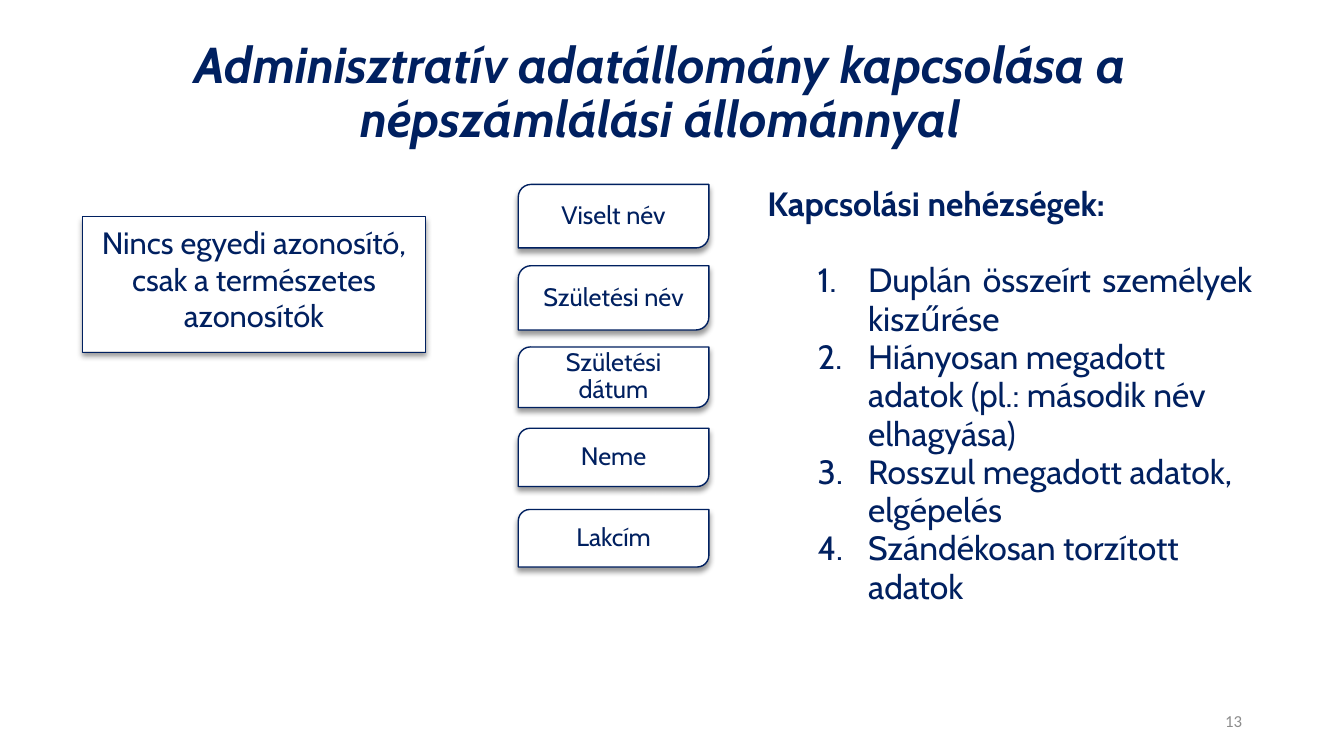
import pptx
import pptx.util
import pptx.dml.color
import pptx.enum.text
import pptx.enum.shapes
import lxml.etree

Pt = pptx.util.Pt
Inches = pptx.util.Inches
Rgb = pptx.dml.color.RGBColor.from_string
Align = pptx.enum.text.PP_ALIGN
Kind = pptx.enum.shapes.MSO_SHAPE
A = "{http://schemas.openxmlformats.org/drawingml/2006/main}"

theme = {
    "navy": "002060", "white": "FFFFFF", "gray": "8C8C8C", "black": "000000",
    "face": "Cabin", "plain": "Calibri",
    "title": 36, "list": 24, "note": 22, "key": 18, "page": 12,
}

deck = pptx.Presentation()
deck.slide_width, deck.slide_height = Inches(13.33), Inches(7.5)
col, row = deck.slide_width / 100, deck.slide_height / 100
slide = deck.slides.add_slide(deck.slide_layouts[1])
shapes = slide.shapes


def write(para, text, size, form={}, face="face", color="navy", **look):
    for name, value in form.items():
        setattr(para, name, value)
    run = para.add_run()
    run.text = text
    run.font.color.rgb = Rgb(theme[color])
    style = {"name": theme[face], "size": Pt(theme[size]), **look}
    for name, value in style.items():
        setattr(run.font, name, value)


def card(kind, box, text, size, edge, pads, form):
    shape = shapes.add_shape(kind, *box)
    shape.fill.solid()
    shape.fill.fore_color.rgb = Rgb(theme["white"])
    shape.line.color.rgb = Rgb(theme["navy"])
    shape.line.width = Pt(edge)
    shape.shadow.inherit = False
    glow = lxml.etree.SubElement(
        shape._element.spPr.find(A + "effectLst"), A + "outerShdw",
        blurRad=str(Pt(4)), dist=str(Pt(3)), dir="5400000", rotWithShape="0")
    tint = lxml.etree.SubElement(glow, A + "srgbClr", val=theme["black"])
    lxml.etree.SubElement(tint, A + "alpha", val="40000")
    frame = shape.text_frame
    frame.word_wrap = True
    frame.vertical_anchor = pptx.enum.text.MSO_ANCHOR.MIDDLE
    for side, pad in zip(("left", "top", "right", "bottom"), pads):
        setattr(frame, "margin_" + side, Inches(pad))
    write(frame.paragraphs[0], text, size, {"alignment": Align.CENTER, **form})
    return shape


title, body = shapes.title, slide.placeholders[1]
page = shapes.add_textbox(0, 0, 0, 0)
spots = [
    (title, 5.1, 4.53, 88.07, 15.87, "MIDDLE"),
    (body, 56.34, 23.87, 37.58, 56.8, "TOP"),
    (page, 70.67, 92.67, 22.5, 5.33, "MIDDLE"),
]
for shape, left, top, width, height, anchor in spots:
    place = {"left": left * col, "top": top * row, "width": width * col, "height": height * row}
    for name, value in place.items():
        setattr(shape, name, int(value))
    form = {
        "word_wrap": True,
        "auto_size": pptx.enum.text.MSO_AUTO_SIZE.NONE,
        "vertical_anchor": pptx.enum.text.MSO_ANCHOR[anchor],
    }
    for name, value in form.items():
        setattr(shape.text_frame, name, value)

write(title.text_frame.paragraphs[0],
      "Adminisztratív adatállomány kapcsolása a népszámlálási állománnyal",
      "title", {"alignment": Align.CENTER, "line_spacing": 0.9}, bold=True, italic=True)
write(page.text_frame.paragraphs[0], "13", "page",
      {"alignment": Align.RIGHT}, face="plain", color="gray")

keys = [
    ("Viselt név", 8.4),
    ("Születési név", 8.5),
    ("Születési dátum", 8),
    ("Neme", 7.7),
    ("Lakcím", 7.6),
]
for step, (text, height) in enumerate(keys):
    box = [int(v) for v in (38.56 * col, (24.4 + 10.75 * step) * row, 14.18 * col, height * row)]
    key = card(Kind.ROUND_2_DIAG_RECTANGLE, box, text, "key", 1, [0.12] * 4, {"line_spacing": 0.9})
    key.adjustments[0] = 0.2

box = [int(v) for v in (6.15 * col, 28.53 * row, 25.5 * col, 18 * row)]
card(Kind.RECTANGLE, box, "Nincs egyedi azonosító, csak a természetes azonosítók",
     "note", 0.25, [0.01, 0.01, 0.01, 0.11], {})

frame = body.text_frame
form = {"line_spacing": 0.95, "space_before": Pt(0), "alignment": Align.JUSTIFY}
head = frame.paragraphs[0]
props = head._p.get_or_add_pPr()
props.set("marL", "0")
props.set("indent", "0")
lxml.etree.SubElement(props, A + "buNone")
write(head, "Kapcsolási nehézségek:", "list", form, bold=True)

items = [
    "Duplán összeírt személyek kiszűrése",
    "Hiányosan megadott adatok (pl.: második név elhagyása)",
    "Rosszul megadott adatok, elgépelés",
    "Szándékosan torzított adatok",
]
for step, text in enumerate(items):
    para = frame.add_paragraph()
    para.level = 1
    props = para._p.get_or_add_pPr()
    props.set("marL", str(Inches(1)))
    props.set("indent", str(Inches(-0.5)))
    lxml.etree.SubElement(props, A + "buFont", typeface=theme["face"])
    lxml.etree.SubElement(props, A + "buAutoNum", type="arabicPeriod")
    first = {"space_before": Pt(27.5)} if step == 0 else {"alignment": Align.LEFT}
    write(para, text, "list", {**form, **first})

deck.save("out.pptx")
